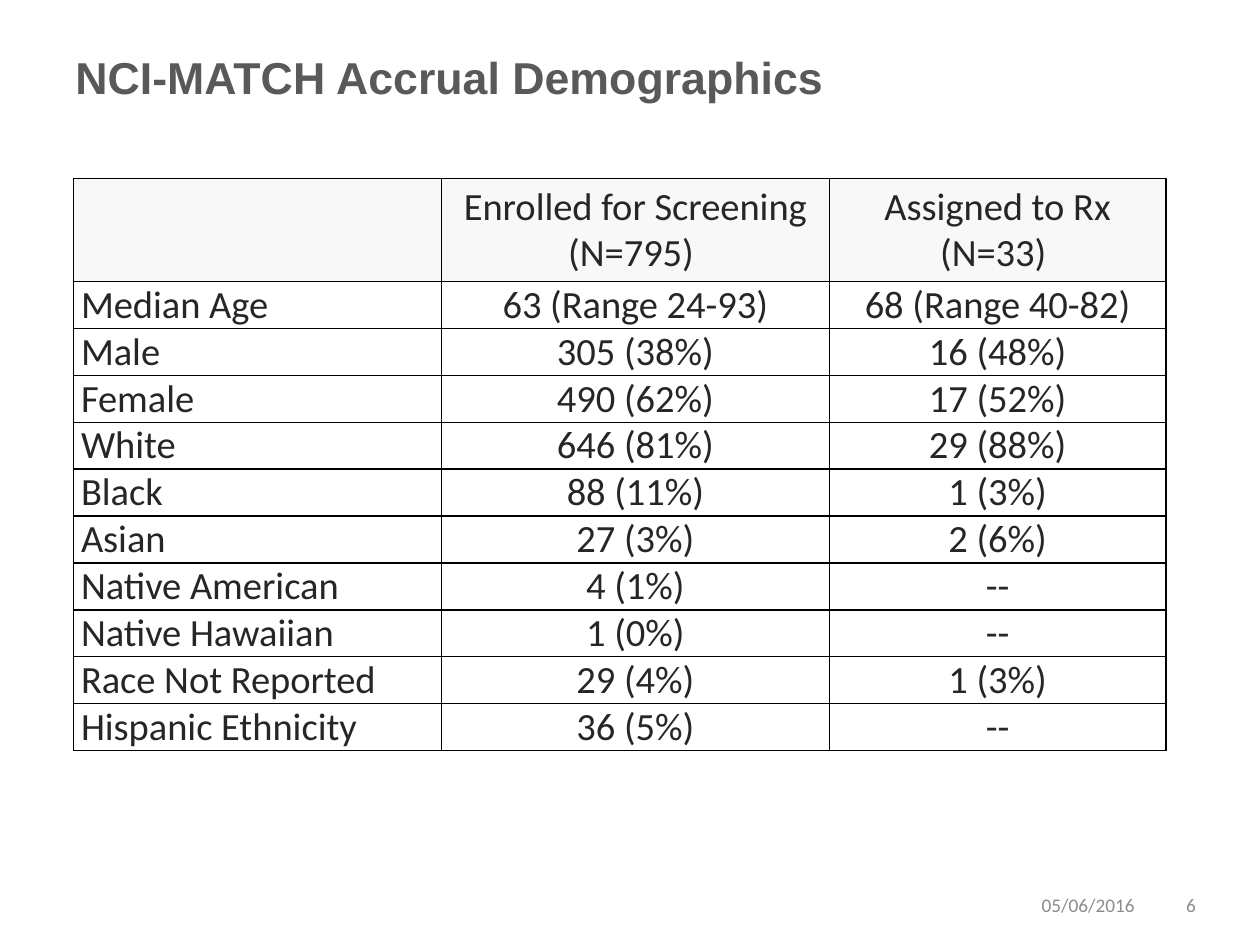
from lxml.etree import SubElement as Sub
from pptx import Presentation
from pptx.dml.color import RGBColor as RGB
from pptx.enum.text import MSO_ANCHOR as Anchor, PP_ALIGN as Align
from pptx.oxml.ns import qn
from pptx.util import Pt

GREY = RGB(0x59, 0x59, 0x59)
INK = RGB(0x26, 0x26, 0x26)
PALE = RGB(0x8C, 0x8C, 0x8C)
SHADE = RGB(0xF8, 0xF8, 0xF8)
BLACK = RGB(0, 0, 0)

COLS = (210.2, 221.8, 192.2)
HEAD_H, ROW_H = 59, 26.8
HEAD = ("", "Enrolled for Screening\n(N=795) ", "Assigned to Rx\n(N=33) ")
ROWS = (
    ("Median Age", "63 (Range 24-93)", "68 (Range 40-82)"),
    ("Male", "305 (38%)", "16 (48%)"),
    ("Female", "490 (62%)", "17 (52%)"),
    ("White", "646 (81%)", "29 (88%)"),
    ("Black", "88 (11%)", "1 (3%)"),
    ("Asian", "27 (3%)", "2 (6%)"),
    ("Native American", "4 (1%)", "--"),
    ("Native Hawaiian", "1 (0%)", "--"),
    ("Race Not Reported", "29 (4%)", "1 (3%)"),
    ("Hispanic Ethnicity", "36 (5%)", "--"),
)


def write(frame, text, size, color, face="Calibri", bold=False, align=Align.LEFT):
    """Fill a text frame with one styled run per line."""
    for i, line in enumerate(text.split("\n")):
        para = frame.paragraphs[0] if i == 0 else frame.add_paragraph()
        para.alignment = align
        run = para.add_run()
        run.text = line
        font = run.font
        font.name, font.size, font.bold = face, Pt(size), bold
        font.color.rgb = color


def add_text(slide, box, text, size, color, **style):
    """Add a wrapped text box centred vertically."""
    frame = slide.shapes.add_textbox(*map(Pt, box)).text_frame
    frame.word_wrap = True
    frame.vertical_anchor = Anchor.MIDDLE
    write(frame, text, size, color, **style)


def add_edges(cell):
    """Draw a one-point black line on each side of a cell."""
    props = cell._tc.get_or_add_tcPr()
    for side in ("lnL", "lnR", "lnT", "lnB"):
        line = Sub(props, qn("a:" + side), w=str(Pt(1)))
        fill = Sub(line, qn("a:solidFill"))
        Sub(fill, qn("a:srgbClr"), val=str(BLACK))


def fill_cell(cell, text, head, align):
    """Style a table cell and write its text."""
    add_edges(cell)
    if head:
        cell.fill.solid()
        cell.fill.fore_color.rgb = SHADE
    else:
        cell.fill.background()
    side, end = (5, 2.9) if head else (4.3, 0)
    cell.margin_left = cell.margin_right = Pt(side)
    cell.margin_top = cell.margin_bottom = Pt(end)
    cell.vertical_anchor = Anchor.MIDDLE
    if text:
        write(cell.text_frame, text, 22, INK, align=align)


def add_grid(slide):
    """Add the table of demographics."""
    data = (HEAD, *ROWS)
    high = HEAD_H + ROW_H * len(ROWS)
    box = map(Pt, (42, 102, sum(COLS), high))
    table = slide.shapes.add_table(len(data), len(COLS), *box).table
    table.horz_banding = False
    for col, width in zip(table.columns, COLS):
        col.width = Pt(width)
    for r, row in enumerate(data):
        table.rows[r].height = Pt(ROW_H if r else HEAD_H)
        for c, text in enumerate(row):
            align = Align.CENTER if c else Align.LEFT
            fill_cell(table.cell(r, c), text, r == 0, align)


def main():
    """Build and save the slide."""
    deck = Presentation()
    deck.slide_width, deck.slide_height = Pt(720), Pt(540)
    slide = deck.slides.add_slide(deck.slide_layouts[6])
    add_text(slide, (36, 21.6, 648, 44.6), "NCI-MATCH Accrual Demographics",
             25.5, GREY, face="Arial", bold=True)
    add_grid(slide)
    add_text(slide, (661.7, 502.6, 28.8, 28.8), "6", 11, PALE, align=Align.RIGHT)
    add_text(slide, (588.2, 502.6, 79.2, 28.8), "05/06/2016", 11, PALE)
    deck.save("out.pptx")


if __name__ == "__main__":
    main()
